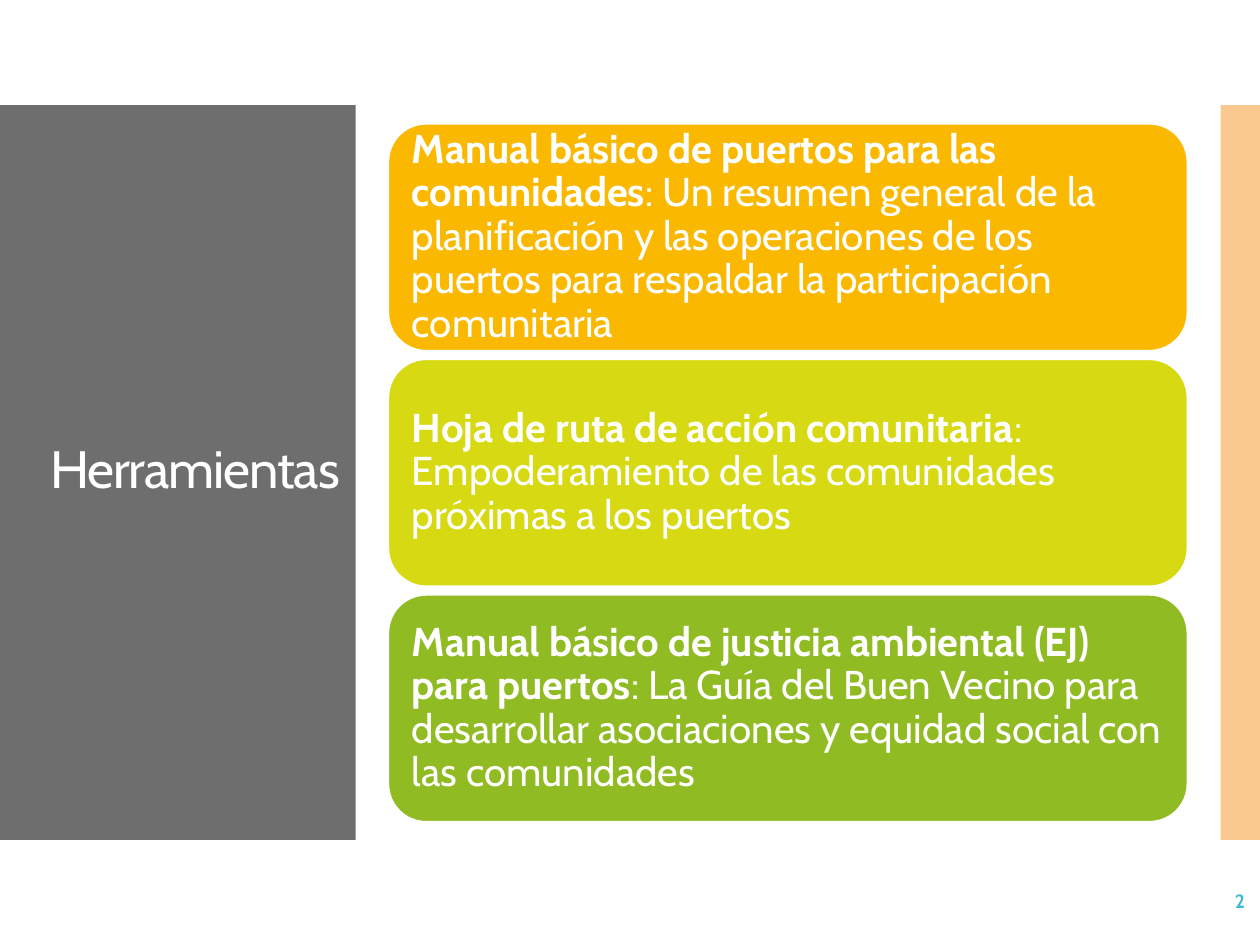
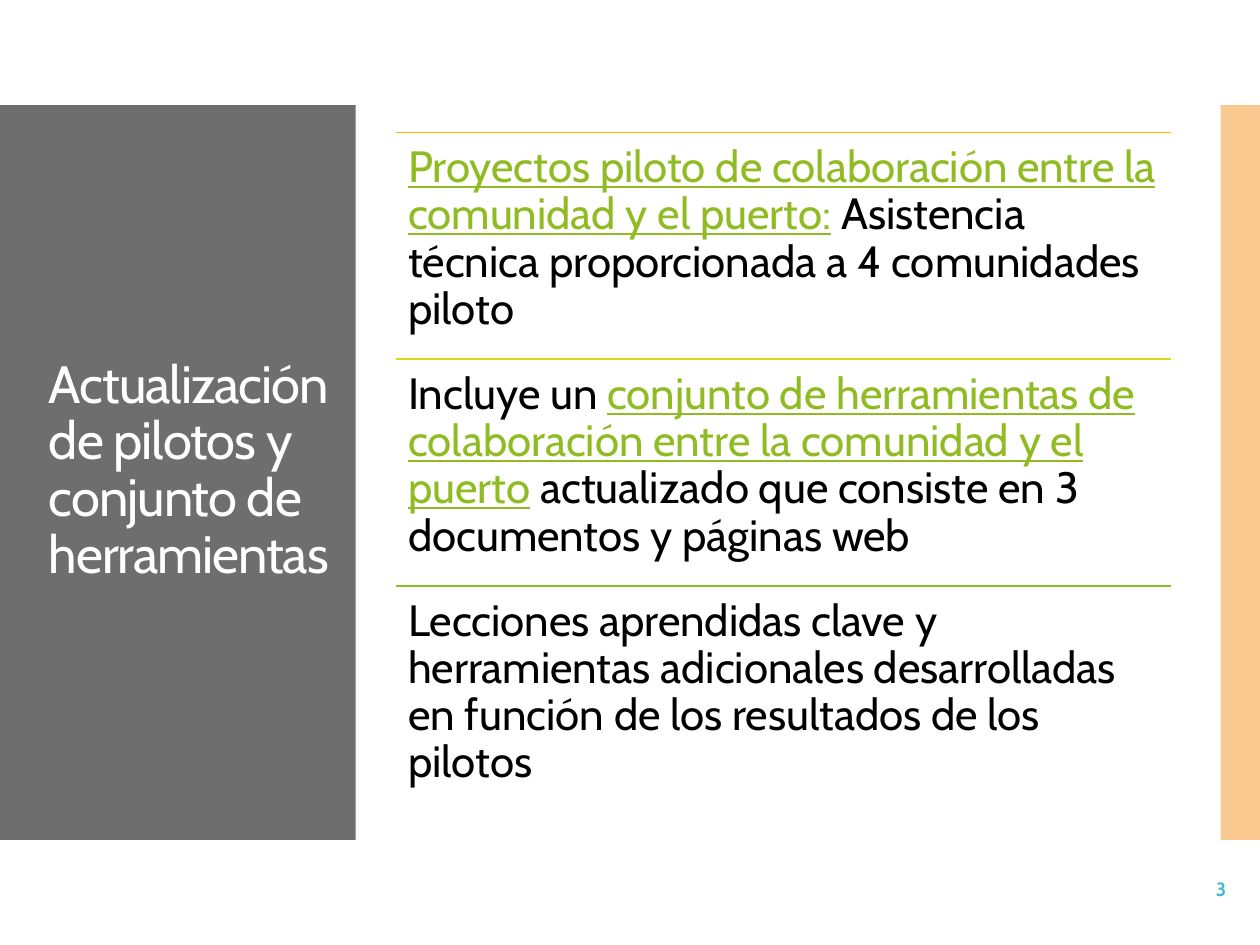
from dataclasses import dataclass

from lxml import etree
from pptx import Presentation
from pptx.dml.color import RGBColor
from pptx.enum.shapes import MSO_CONNECTOR, MSO_SHAPE
from pptx.enum.text import MSO_ANCHOR, PP_ALIGN
from pptx.oxml.ns import qn
from pptx.util import Pt

RECTANGLE = MSO_SHAPE.RECTANGLE
ROUNDED = MSO_SHAPE.ROUNDED_RECTANGLE
STRAIGHT = MSO_CONNECTOR.STRAIGHT
TOP = MSO_ANCHOR.TOP
MIDDLE = MSO_ANCHOR.MIDDLE
LEFT = PP_ALIGN.LEFT
RIGHT = PP_ALIGN.RIGHT


@dataclass(frozen=True)
class Theme:
    font: str = "Cabin"
    white: str = "FFFFFF"
    black: str = "000000"
    panel: str = "6E6E6E"
    stripe: str = "F79421"
    number: str = "40BAD2"
    link: str = "90BB23"
    accents: tuple = ("FAB900", "D7D913", "90BB23")
    title_size: float = 30
    card_size: float = 23
    row_size: float = 25
    number_size: float = 11
    line_width: float = 0.85
    line_spacing: float = 0.9


THEME = Theme()

TOOLS = [
    ("Manual básico de puertos para las comunidades",
     ": Un resumen general de la planificación y las operaciones de los puertos "
     "para respaldar la participación comunitaria"),
    ("Hoja de ruta de acción comunitaria",
     ": Empoderamiento de las comunidades próximas a los puertos"),
    ("Manual básico de justicia ambiental (EJ) para puertos",
     ": La Guía del Buen Vecino para desarrollar asociaciones y equidad social "
     "con las comunidades"),
]

PILOT_ROWS = [
    [("Proyectos piloto de colaboración entre la comunidad y el puerto:", True),
     (" Asistencia técnica proporcionada a 4 comunidades piloto", False)],
    [("Incluye un ", False),
     ("conjunto de herramientas de colaboración entre la comunidad y el puerto", True),
     (" actualizado que consiste en 3 documentos y páginas web", False)],
    [("Lecciones aprendidas clave y herramientas adicionales desarrolladas "
      "en función de los resultados de los pilotos", False)],
]


def points(*lengths):
    return [Pt(length) for length in lengths]


def color(code):
    return RGBColor.from_string(code)


def add_span(para, text, size, code, bold=False, underline=False):
    span = para.add_run()
    span.text = text
    span.font.name = THEME.font
    span.font.size = Pt(size)
    span.font.color.rgb = color(code)
    span.font.bold = bold
    span.font.underline = underline
    return span


def prepare_text(box, anchor, vertical_inset, align=LEFT, spacing=1.0):
    frame = box.text_frame
    frame.word_wrap = True
    frame.vertical_anchor = anchor
    frame.margin_left = frame.margin_right = Pt(7.2)
    frame.margin_top = frame.margin_bottom = Pt(vertical_inset)
    para = frame.paragraphs[0]
    para.alignment = align
    para.line_spacing = spacing
    return para


def add_block(page, kind, frame, code):
    block = page.shapes.add_shape(kind, *points(*frame))
    block.shadow.inherit = False
    block.fill.solid()
    block.fill.fore_color.rgb = color(code)
    block.line.fill.background()
    return block


def add_stripe(page):
    stripe = add_block(page, RECTANGLE, (697.5, 60, 22.5, 420), THEME.stripe)
    fill_color = stripe.fill._xPr.find(qn("a:solidFill"))[0]
    etree.SubElement(fill_color, qn("a:alpha")).set("val", "50000")


def add_title(page, title, frame):
    box = page.shapes.add_textbox(*points(*frame))
    para = prepare_text(box, MIDDLE, 3.6, spacing=THEME.line_spacing)
    span = add_span(para, title, THEME.title_size, THEME.white)
    span.font._element.set("spc", "-60")


def add_number(page, number, frame):
    box = page.shapes.add_textbox(*points(*frame))
    para = prepare_text(box, MIDDLE, 3.6, align=RIGHT)
    add_span(para, str(number), THEME.number_size, THEME.number, bold=True)


def add_page(deck, title, title_frame, number, number_frame):
    page = deck.slides.add_slide(deck.slide_layouts[6])
    add_block(page, RECTANGLE, (0, 60, 203.3, 420), THEME.panel)
    add_stripe(page)
    add_title(page, title, title_frame)
    add_number(page, number, number_frame)
    return page


def add_card(page, top, code, name, description):
    card = add_block(page, ROUNDED, (222, top, 456.5, 129.6), code)
    card.line.color.rgb = color(THEME.white)
    card.line.width = Pt(THEME.line_width)
    para = prepare_text(card, MIDDLE, 7.2, spacing=THEME.line_spacing)
    add_span(para, name, THEME.card_size, THEME.white, bold=True)
    add_span(para, description, THEME.card_size, THEME.white)


def add_rule(page, left, top, width, code):
    rule = page.shapes.add_connector(STRAIGHT, *points(left, top, left + width, top))
    rule.line.color.rgb = color(code)
    rule.line.width = Pt(THEME.line_width)
    etree.SubElement(rule._element.spPr, qn("a:effectLst"))


def add_row(page, top, code, spans):
    left, width, height = 226.2, 443, 129.6
    add_rule(page, left, top, width, code)
    box = page.shapes.add_textbox(*points(left, top, width, height))
    para = prepare_text(box, TOP, 7.2, spacing=THEME.line_spacing)
    for text, linked in spans:
        add_span(para, text, THEME.row_size, THEME.link if linked else THEME.black,
                 underline=linked)


def build_tools(deck):
    page = add_page(deck, "Herramientas", (21.5, 88.6, 181.5, 362),
                    2, (628, 500.4, 90.5, 28.8))
    for index, (code, tool) in enumerate(zip(THEME.accents, TOOLS)):
        add_card(page, 70.8 + index * 134.6, code, *tool)


def build_pilots(deck):
    page = add_page(deck, "Actualización de pilotos y conjunto de herramientas",
                    (20.9, 93.6, 186.5, 351.4), 3, (620, 494, 87.8, 28))
    for index, (code, spans) in enumerate(zip(THEME.accents, PILOT_ROWS)):
        add_row(page, 75.6 + index * 129.6, code, spans)


def main():
    deck = Presentation()
    deck.slide_width, deck.slide_height = points(720, 540)
    build_tools(deck)
    build_pilots(deck)
    deck.save("out.pptx")


if __name__ == "__main__":
    main()
